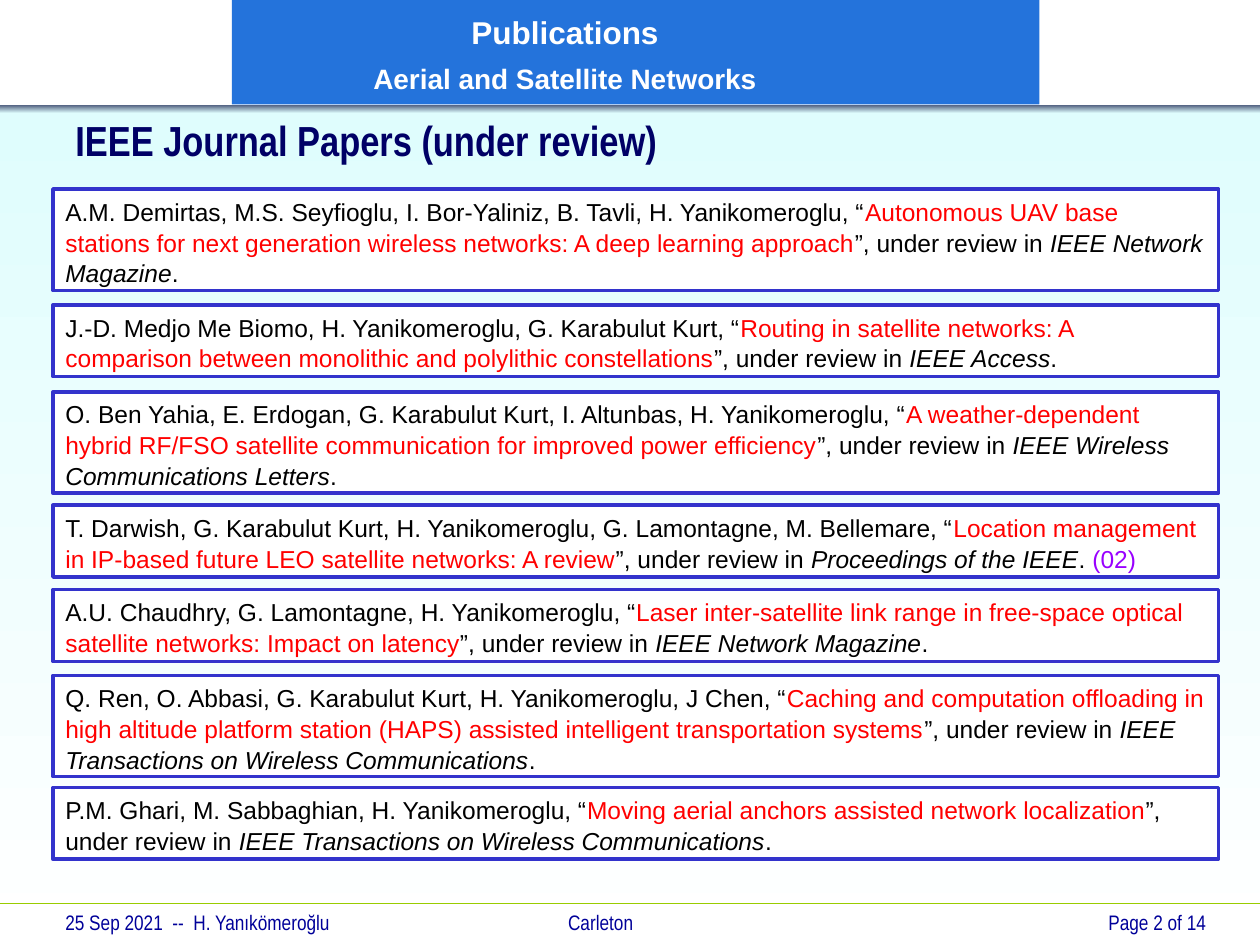
from lxml.etree import SubElement
from pptx import Presentation
from pptx.dml.color import RGBColor
from pptx.enum.shapes import MSO_CONNECTOR, MSO_SHAPE
from pptx.enum.text import MSO_ANCHOR as Anchor, MSO_AUTO_SIZE as AutoSize, PP_ALIGN as Align
from pptx.oxml.ns import qn
from pptx.util import Inches, Pt

COLORS = {
    "white": "FFFFFF", "black": "000000", "sky": "DFFDFD", "slate": "475577",
    "banner": "2473DB", "title": "000066", "footer": "000099", "rule": "99CC00",
    "border": "3333CC", "paper": "FF0000", "note": "9900FF",
}
LINE_HEIGHT = 0.235
INSET = 0.05

# top, number of lines, authors, paper title, journal, trailing note
PAPERS = [
    (1.5, 3, "A.M. Demirtas, M.S. Seyfioglu, I. Bor-Yaliniz, B. Tavli, H. Yanikomeroglu",
     "Autonomous UAV base stations for next generation wireless networks: "
     "A deep learning approach", "IEEE Network Magazine", ""),
    (2.42, 2, "J.-D. Medjo Me Biomo, H. Yanikomeroglu, G. Karabulut Kurt",
     "Routing in satellite networks: A comparison between monolithic and "
     "polylithic constellations", "IEEE Access", ""),
    (3.11, 3, "O. Ben Yahia, E. Erdogan, G. Karabulut Kurt, I. Altunbas, H. Yanikomeroglu",
     "A weather-dependent hybrid RF/FSO satellite communication for improved "
     "power efficiency", "IEEE Wireless Communications Letters", ""),
    (4.01, 2, "T. Darwish, G. Karabulut Kurt, H. Yanikomeroglu, G. Lamontagne, M. Bellemare",
     "Location management in IP-based future LEO satellite networks: A review",
     "Proceedings of the IEEE", "(02)"),
    (4.68, 2, "A.U. Chaudhry, G. Lamontagne, H. Yanikomeroglu",
     "Laser inter-satellite link range in free-space optical satellite networks: "
     "Impact on latency", "IEEE Network Magazine", ""),
    (5.36, 3, "Q. Ren, O. Abbasi, G. Karabulut Kurt, H. Yanikomeroglu, J Chen",
     "Caching and computation offloading in high altitude platform station (HAPS) "
     "assisted intelligent transportation systems",
     "IEEE Transactions on Wireless Communications", ""),
    (6.25, 2, "P.M. Ghari, M. Sabbaghian, H. Yanikomeroglu",
     "Moving aerial anchors assisted network localization",
     "IEEE Transactions on Wireless Communications", ""),
]


def color(name):
    return RGBColor.from_string(COLORS[name])


def style(font, size, name, tint, bold=False, italic=False):
    font.size, font.name, font.bold, font.italic = Pt(size), name, bold, italic
    font.color.rgb = color(tint)


def add_rect(page, left, top, width, height, *fills):
    """Add a borderless rectangle; two fills make a top-to-bottom gradient."""
    rect = page.shapes.add_shape(MSO_SHAPE.RECTANGLE, Inches(left), Inches(top),
                                 Inches(width), Inches(height))
    rect.shadow.inherit = False
    rect.line.fill.background()
    if len(fills) == 1:
        rect.fill.solid()
        rect.fill.fore_color.rgb = color(fills[0])
    else:
        rect.fill.gradient()
        rect.fill.gradient_angle = 270
        for stop, name in zip(rect.fill.gradient_stops, fills):
            stop.color.rgb = color(name)
    return rect


def add_text(page, left, top, width, height, text):
    box = page.shapes.add_textbox(Inches(left), Inches(top), Inches(width), Inches(height))
    box.text_frame.word_wrap = True
    box.text_frame.text = text
    return box.text_frame


def add_backdrop(page, top, width, height):
    add_rect(page, 0, top, width, height, "sky", "white")
    add_rect(page, 0, top - 0.03, width, 0.07, "slate", "sky")


def add_banner(page, left, top, width, height):
    frame = add_rect(page, left, top, width, height, "banner").text_frame
    frame.vertical_anchor = Anchor.MIDDLE
    frame.margin_right = Inches(1.22)
    frame.text = "Publications\nAerial and Satellite Networks"
    for para, size in zip(frame.paragraphs, (18, 16)):
        para.alignment = Align.CENTER
        para.line_spacing = 1.1
        style(para.font, size, "Arial", "white", bold=True)
    frame.paragraphs[1].space_before = Pt(4)


def add_title(page, left, top, width, height):
    frame = add_text(page, left, top, width, height, "IEEE Journal Papers (under review)")
    frame.vertical_anchor = Anchor.MIDDLE
    style(frame.paragraphs[0].font, 24, "Arial Narrow", "title", bold=True)


def add_paper(page, left, width, top, lines, authors, paper, journal, note):
    box = add_rect(page, left, top, width, 2 * INSET + lines * LINE_HEIGHT, "white")
    box.line.color.rgb = color("border")
    box.line.width = Pt(2)
    frame = box.text_frame
    frame.word_wrap = True
    frame.auto_size = AutoSize.SHAPE_TO_FIT_TEXT
    frame.vertical_anchor = Anchor.TOP
    para = frame.paragraphs[0]
    para.alignment = Align.LEFT
    para.line_spacing = 1.05
    parts = [(f"{authors}, “", "black", False), (paper, "paper", False),
             ("”, under review in ", "black", False), (journal, "black", True),
             (". " if note else ".", "black", False)]
    if note:
        parts.append((note, "note", False))
    for text, tint, italic in parts:
        span = para.add_run()
        span.text = text
        style(span.font, 14, "Arial", tint, italic=italic)


def add_footer(page, top, width):
    rule = page.shapes.add_connector(MSO_CONNECTOR.STRAIGHT, 0, Inches(top),
                                     Inches(width), Inches(top))
    rule.line.color.rgb = color("rule")
    rule.line.width = Pt(0.75)
    SubElement(rule.element.spPr, qn("a:effectLst"))

    credit = add_text(page, 0.42, top, 6.25, 0.33,
                      "25 Sep 2021  --  H. Yanıkömeroğlu\tCarleton").paragraphs[0]
    tabs = SubElement(credit._p.get_or_add_pPr(), qn("a:tabLst"))
    SubElement(tabs, qn("a:tab"), pos=str(Inches(3.99)), algn="l")
    number = add_text(page, 7.5, top, 2.17, 0.25, "Page 2 of 14").paragraphs[0]
    number.alignment = Align.RIGHT
    for para in (credit, number):
        style(para.font, 12, "Arial Narrow", "footer")


def main():
    deck = Presentation()
    deck.slide_width, deck.slide_height = Inches(10), Inches(7.5)
    page = deck.slides.add_slide(deck.slide_layouts[6])
    add_backdrop(page, 0.86, 10, 6.64)
    add_footer(page, 7.17, 10)
    add_banner(page, 1.84, 0, 6.41, 0.83)
    add_title(page, 0.5, 0.9, 8.5, 0.42)
    for paper in PAPERS:
        add_paper(page, 0.42, 9.25, *paper)
    deck.save("out.pptx")


if __name__ == "__main__":
    main()
